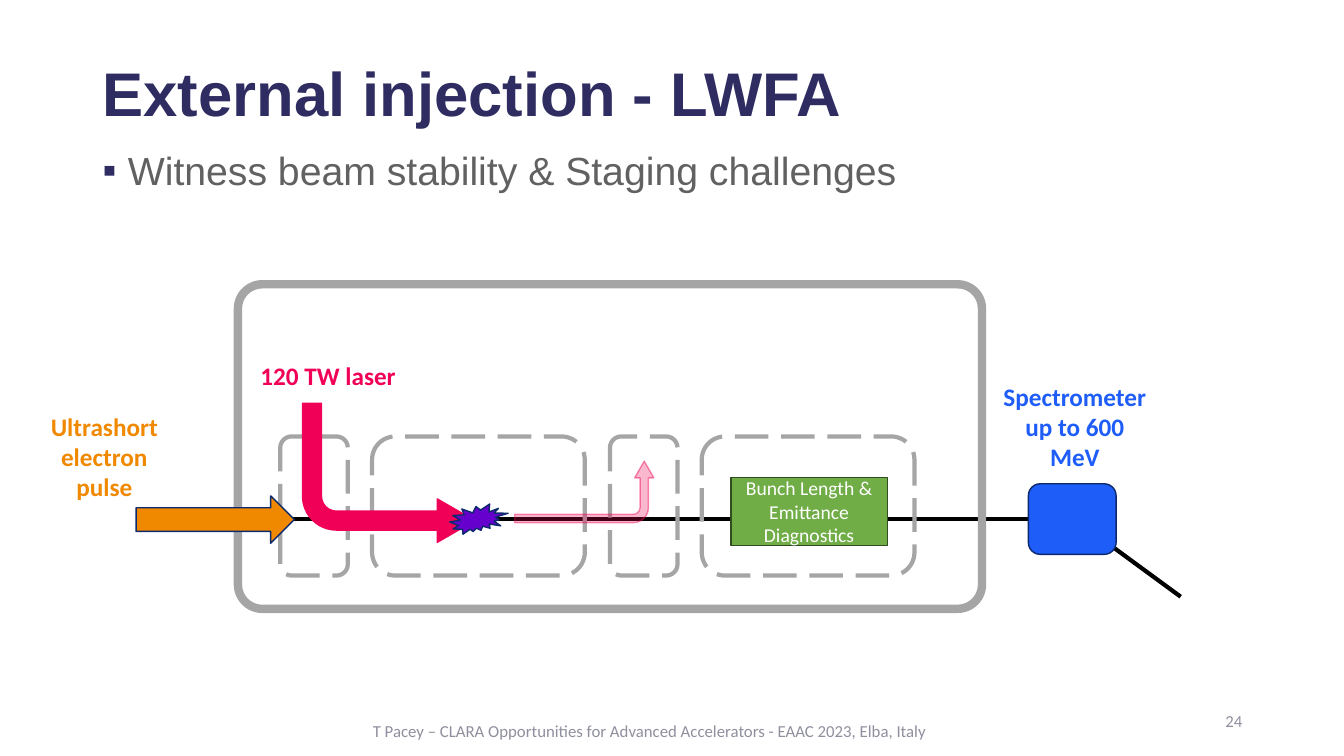
import dataclasses
import typing

import lxml.etree
import pptx
import pptx.dml.color
import pptx.enum.dml
import pptx.enum.shapes
import pptx.enum.text
import pptx.oxml.ns
import pptx.util

Inches = pptx.util.Inches
Pt = pptx.util.Pt
RGBColor = pptx.dml.color.RGBColor
SHAPE = pptx.enum.shapes.MSO_SHAPE
ALIGN = pptx.enum.text.PP_ALIGN
ANCHOR = pptx.enum.text.MSO_ANCHOR
qn = pptx.oxml.ns.qn

INDIGO = RGBColor(0x2E, 0x2C, 0x61)
TEXT_GREY = RGBColor(0x61, 0x61, 0x61)
FOOTER_GREY = RGBColor(0x8F, 0x8F, 0x9E)
FRAME_GREY = RGBColor(0xA5, 0xA5, 0xA5)
BLACK = RGBColor(0x00, 0x00, 0x00)
WHITE = RGBColor(0xFF, 0xFF, 0xFF)
BLUE = RGBColor(0x1E, 0x5D, 0xF8)
NAVY = RGBColor(0x0D, 0x29, 0x6D)
PINK = RGBColor(0xF0, 0x00, 0x56)
ORANGE = RGBColor(0xF0, 0x89, 0x00)
GREEN = RGBColor(0x70, 0xAD, 0x47)
DARK_GREEN = RGBColor(0x31, 0x4C, 0x1F)
PURPLE = RGBColor(0x66, 0x00, 0xCC)

Box = tuple[float, float, float, float]
BENT = (0.136, 0.156, 0.27, 0.244)
BEAM_Y = 5.15
BEND_X = 10.66


@dataclasses.dataclass
class Label:
    text: str
    box: Box
    size: int
    color: RGBColor
    font: str = "Calibri"
    bold: bool = False
    align: ALIGN = ALIGN.CENTER
    anchor: ANCHOR = ANCHOR.MIDDLE
    spacing: float = 1.0
    bullet: typing.Optional[RGBColor] = None


@dataclasses.dataclass
class Block:
    kind: SHAPE
    box: Box
    line: RGBColor
    fill: typing.Optional[RGBColor] = None
    width: float = 1
    dashed: bool = False
    adjust: tuple[float, ...] = ()
    rotation: float = 0
    flip: bool = False
    fill_alpha: int = 100
    line_alpha: int = 100
    label: typing.Optional[Label] = None


STATIONS = [
    Block(SHAPE.ROUNDED_RECTANGLE, (start + dx, 4.33, width, 1.38), FRAME_GREY, width=3, dashed=True)
    for start in (2.78, 6.05)
    for dx, width in ((0, 0.67), (0.91, 2.11))
]

DIAGNOSTICS_BOX = (7.25, 4.74, 1.55, 0.67)
BLOCKS = [
    Block(SHAPE.ROUNDED_RECTANGLE, (2.36, 2.82, 7.38, 3.22), FRAME_GREY, width=6, adjust=(0.075,)),
    *STATIONS,
    Block(SHAPE.ROUNDED_RECTANGLE, (10.2, 4.8, 0.87, 0.7), NAVY, BLUE),
    Block(SHAPE.BENT_ARROW, (3, 4, 1.71, 1.38), PINK, PINK, adjust=BENT, rotation=180, flip=True),
    Block(SHAPE.RIGHT_ARROW, (1.35, 4.92, 1.57, 0.47), NAVY, ORANGE),
    Block(SHAPE.RECTANGLE, DIAGNOSTICS_BOX, DARK_GREEN, GREEN,
          label=Label("Bunch Length & Emittance Diagnostics", DIAGNOSTICS_BOX, 14, WHITE)),
    Block(SHAPE.EXPLOSION2, (4.46, 5, 0.58, 0.3), NAVY, PURPLE),
    Block(SHAPE.BENT_ARROW, (5.49, 4.19, 0.61, 1.38), PINK, PINK, adjust=BENT, rotation=90, flip=True,
          fill_alpha=28, line_alpha=43),
]

LABELS = [
    Label("External injection - LWFA", (0.92, 0.23, 11.5, 1.45), 44, INDIGO, "Arial", True,
          ALIGN.LEFT, spacing=0.9),
    Label("Witness beam stability & Staging challenges", (0.92, 1.45, 11.5, 0.52), 28, TEXT_GREY, "Arial",
          align=ALIGN.LEFT, anchor=ANCHOR.TOP, spacing=0.9, bullet=INDIGO),
    Label("Ultrashort electron pulse", (0.33, 4.03, 1.41, 1.01), 18, ORANGE, bold=True, anchor=ANCHOR.TOP),
    Label("120 TW laser", (2.45, 3.53, 1.61, 0.4), 18, PINK, bold=True, anchor=ANCHOR.TOP),
    Label("Spectrometer up to 600 MeV", (9.85, 3.73, 1.62, 1.01), 18, BLUE, bold=True, anchor=ANCHOR.TOP),
    Label("24", (9.42, 6.95, 3, 0.4), 12, FOOTER_GREY, align=ALIGN.RIGHT),
    Label("T Pacey – CLARA Opportunities for Advanced Accelerators - EAAC 2023, Elba, Italy",
          (3.41, 7.05, 6.07, 0.4), 12, FOOTER_GREY),
]

BEAMLINE = [((1.37, BEAM_Y), (BEND_X, BEAM_Y)), ((BEND_X, BEAM_Y), (11.71, 5.92))]


def set_alpha(fill_parent: typing.Any, percent: int) -> None:
    if percent < 100:
        color = fill_parent.find(qn("a:solidFill")).find(qn("a:srgbClr"))
        lxml.etree.SubElement(color, qn("a:alpha"), val=str(percent * 1000))


def add_bullet(p: typing.Any, color: RGBColor) -> None:
    pPr = p._p.get_or_add_pPr()
    pPr.set("marL", str(Inches(0.25)))
    pPr.set("indent", str(-Inches(0.25)))
    buClr = lxml.etree.SubElement(pPr, qn("a:buClr"))
    lxml.etree.SubElement(buClr, qn("a:srgbClr"), val=str(color))
    lxml.etree.SubElement(pPr, qn("a:buFont"), typeface="Arial")
    lxml.etree.SubElement(pPr, qn("a:buChar"), char="▪")


def write_text(tf: typing.Any, label: Label) -> None:
    tf.word_wrap = True
    tf.vertical_anchor = label.anchor
    p = tf.paragraphs[0]
    if label.bullet is not None:
        add_bullet(p, label.bullet)
    for name, value in {"alignment": label.align, "line_spacing": label.spacing}.items():
        setattr(p, name, value)
    r = p.add_run()
    r.text = label.text
    for name, value in {"name": label.font, "size": Pt(label.size), "bold": label.bold}.items():
        setattr(r.font, name, value)
    r.font.color.rgb = label.color


def draw_label(s: typing.Any, label: Label) -> None:
    tb = s.shapes.add_textbox(*map(Inches, label.box))
    write_text(tb.text_frame, label)


def draw_line(s: typing.Any, start: tuple[float, float], end: tuple[float, float]) -> None:
    cx = s.shapes.add_connector(pptx.enum.shapes.MSO_CONNECTOR.STRAIGHT, *map(Inches, start + end))
    cx.line.color.rgb = BLACK
    cx.line.width = Pt(3)
    lxml.etree.SubElement(cx._element.spPr, qn("a:effectLst"))


def draw_block(s: typing.Any, block: Block) -> None:
    sp = s.shapes.add_shape(block.kind, *map(Inches, block.box))
    sp.shadow.inherit = False
    sp.rotation = block.rotation
    for i, value in enumerate(block.adjust):
        sp.adjustments[i] = value
    spPr = sp._element.spPr
    if block.flip:
        spPr.find(qn("a:xfrm")).set("flipH", "1")
    if block.fill is None:
        sp.fill.background()
    else:
        sp.fill.solid()
        sp.fill.fore_color.rgb = block.fill
        set_alpha(spPr, block.fill_alpha)
    sp.line.color.rgb = block.line
    sp.line.width = Pt(block.width)
    set_alpha(spPr.find(qn("a:ln")), block.line_alpha)
    if block.dashed:
        sp.line.dash_style = pptx.enum.dml.MSO_LINE.LONG_DASH
    if block.label is not None:
        write_text(sp.text_frame, block.label)


def main() -> None:
    prs = pptx.Presentation()
    prs.slide_width = Inches(13.33)
    prs.slide_height = Inches(7.5)
    s = prs.slides.add_slide(prs.slide_layouts[6])
    for start, end in BEAMLINE:
        draw_line(s, start, end)
    for block in BLOCKS:
        draw_block(s, block)
    for label in LABELS:
        draw_label(s, label)
    prs.save("out.pptx")


if __name__ == "__main__":
    main()
